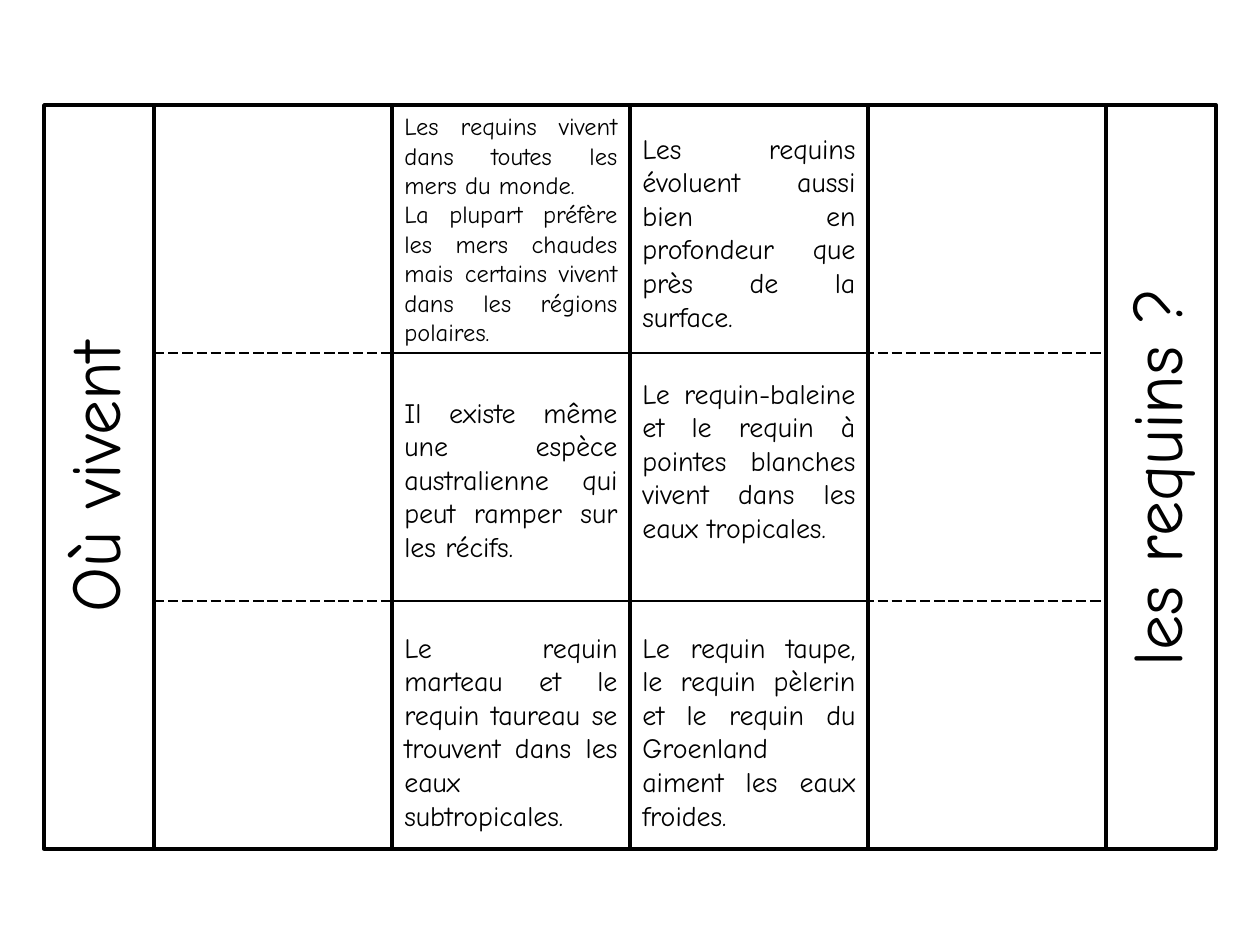
from dataclasses import dataclass

from pptx import Presentation
from pptx import util as u
from pptx.dml.color import RGBColor
from pptx.enum import dml, shapes, text
from pptx.oxml import ns
from lxml import etree

PX_PER_INCH = 126


def px(length):
    return u.Emu(round(length * 914400 / PX_PER_INCH))


@dataclass(frozen=True)
class Theme:
    font: str = "Comic Neue"
    ink: RGBColor = RGBColor(0, 0, 0)
    paper: RGBColor = RGBColor(255, 255, 255)
    title_size: int = 40
    body_size: int = 16
    small_size: int = 14
    border: float = 2
    fold: float = 0.75


class Sheet:
    """Draws elements on one slide in one style."""

    def __init__(self, slide, theme):
        self.slide = slide
        self.theme = theme

    def panel(self, left, top, width, height, filled=True, parent=None):
        shape = (parent or self.slide).shapes.add_shape(
            shapes.MSO_SHAPE.RECTANGLE, px(left), px(top), px(width), px(height))
        shape.shadow.inherit = False
        if filled:
            shape.fill.solid()
            shape.fill.fore_color.rgb = self.theme.paper
        else:
            shape.fill.background()
        shape.line.color.rgb = self.theme.ink
        shape.line.width = u.Pt(self.theme.border)

    def fold_line(self, left, right, y, dashed=False):
        line = self.slide.shapes.add_connector(
            shapes.MSO_CONNECTOR.STRAIGHT, px(left), px(y), px(right), px(y))
        line.line.color.rgb = self.theme.ink
        line.line.width = u.Pt(self.theme.fold)
        if dashed:
            line.line.dash_style = dml.MSO_LINE.LONG_DASH
        etree.SubElement(line._element.spPr, ns.qn("a:effectLst"))

    def text(self, content, left, top, width, height, size,
             align=text.PP_ALIGN.JUSTIFY, upward=False):
        box = self.slide.shapes.add_textbox(px(left), px(top), px(width), px(height))
        frame = box.text_frame
        frame.word_wrap = True
        frame.auto_size = text.MSO_AUTO_SIZE.SHAPE_TO_FIT_TEXT
        if upward:
            frame._txBody.bodyPr.set("vert", "vert270")
        frame.text = content
        for paragraph in frame.paragraphs:
            paragraph.alignment = align
            for run in paragraph.runs:
                run.font.name = self.theme.font
                run.font.size = u.Pt(size)
                run.font.color.rgb = self.theme.ink


TOP, ROW_HEIGHT, ROWS = 105, 248, 3
HEIGHT = ROW_HEIGHT * ROWS
FLAP_LEFT, FLAP_WIDTH = 44, 110
COLUMN_WIDTH = 238
COLUMNS = [FLAP_LEFT + FLAP_WIDTH + COLUMN_WIDTH * i for i in range(5)]

# Column, top, height, small type, wording
FACTS = [
    (1, 105, 251, True, "Les requins vivent dans toutes les mers du monde.\n"
     "La plupart préfère les mers chaudes mais certains vivent dans les régions polaires."),
    (1, 389, 183, False,
     "Il existe même une espèce australienne qui peut ramper sur les récifs."),
    (1, 624, 217, False,
     "Le requin marteau et le requin taureau se trouvent dans les eaux subtropicales."),
    (2, 125, 217, False,
     "Les requins évoluent aussi bien en profondeur que près de la surface."),
    (2, 370, 217, False,
     "Le requin-baleine et le requin à pointes blanches vivent dans les eaux tropicales."),
    (2, 624, 217, False,
     "Le requin taupe, le requin pèlerin et le requin du Groenland aiment les eaux froides."),
]
FLAPS = [(FLAP_LEFT, "Où vivent"), (COLUMNS[4], "les requins ?")]


def main():
    presentation = Presentation()
    presentation.slide_width, presentation.slide_height = px(1260), px(945)
    slide = presentation.slides.add_slide(presentation.slide_layouts[6])
    theme = Theme()
    sheet = Sheet(slide, theme)

    panels = slide.shapes.add_group_shape()
    for column in (1, 2, 0, 3):
        sheet.panel(COLUMNS[column], TOP, COLUMN_WIDTH, HEIGHT, parent=panels)

    for first, last, dashed in ((0, 4, True), (1, 3, False)):
        for row in range(1, ROWS):
            sheet.fold_line(COLUMNS[first], COLUMNS[last], TOP + ROW_HEIGHT * row, dashed)

    for column, top, height, small, wording in FACTS:
        size = theme.small_size if small else theme.body_size
        sheet.text(wording, COLUMNS[column], top, COLUMN_WIDTH, height, size)

    for left, title in FLAPS:
        sheet.panel(left, TOP, FLAP_WIDTH, HEIGHT, filled=False)
        sheet.text(title, left, TOP, FLAP_WIDTH, HEIGHT, theme.title_size,
                   text.PP_ALIGN.CENTER, upward=True)

    presentation.save("out.pptx")


if __name__ == "__main__":
    main()
